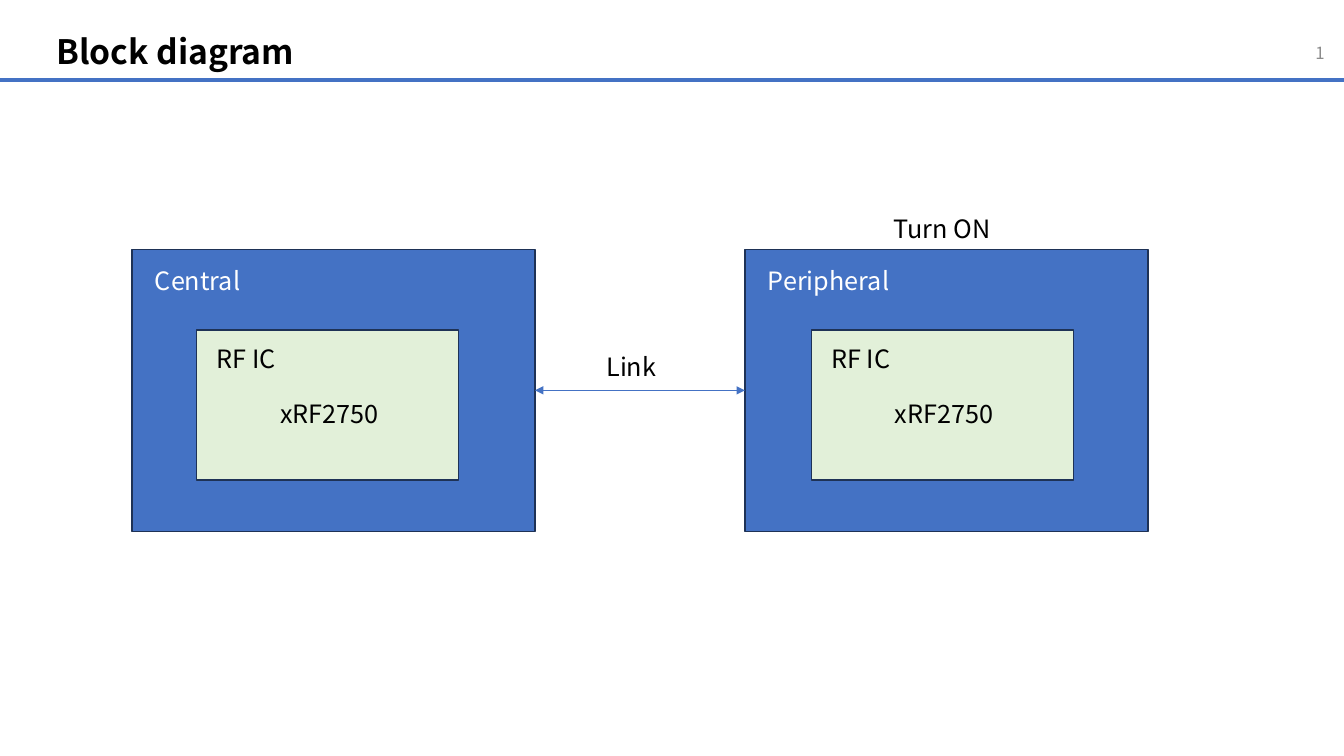
from dataclasses import dataclass
from typing import NamedTuple

from lxml import etree
from pptx import Presentation
from pptx.dml.color import RGBColor
from pptx.enum.shapes import MSO_CONNECTOR, MSO_SHAPE
from pptx.enum.text import MSO_ANCHOR, PP_ALIGN
from pptx.oxml.ns import qn
from pptx.util import Inches, Pt

RECTANGLE = MSO_SHAPE.RECTANGLE
STRAIGHT = MSO_CONNECTOR.STRAIGHT
TOP, MIDDLE = MSO_ANCHOR.TOP, MSO_ANCHOR.MIDDLE
LEFT, RIGHT = PP_ALIGN.LEFT, PP_ALIGN.RIGHT
LEFT_SIDE, RIGHT_SIDE = 1, 3

WIDTH, HEIGHT = Inches(13.33), Inches(7.5)
COLUMN, ROW = WIDTH / 100, HEIGHT / 100
LABEL_WIDTH, LABEL_HEIGHT = 9.3, 5.33


@dataclass(frozen=True)
class Theme:
    font: str = "Noto Sans CJK JP"
    accent: RGBColor = RGBColor(0x44, 0x72, 0xC4)
    outline: RGBColor = RGBColor(0x1E, 0x32, 0x56)
    chip: RGBColor = RGBColor(0xE2, 0xF0, 0xD9)
    dark: RGBColor = RGBColor(0, 0, 0)
    light: RGBColor = RGBColor(0xFF, 0xFF, 0xFF)
    muted: RGBColor = RGBColor(0x8C, 0x8C, 0x8C)
    title_size: int = 24
    label_size: int = 18
    number_size: int = 12


THEME = Theme()


class Box(NamedTuple):
    left: float
    top: float
    width: float
    height: float

    def inner(self, left, top, width=LABEL_WIDTH, height=LABEL_HEIGHT):
        return Box(self.left + left, self.top + top, width, height)

    def lengths(self):
        return (round(self.left * COLUMN), round(self.top * ROW),
                round(self.width * COLUMN), round(self.height * ROW))


def add_text(page, box, text, color=THEME.dark, size=THEME.label_size,
             bold=False, align=LEFT, anchor=TOP):
    frame = page.shapes.add_textbox(*box.lengths()).text_frame
    frame.word_wrap = True
    frame.vertical_anchor = anchor
    para = frame.paragraphs[0]
    para.alignment = align
    span = para.add_run()
    span.text = text
    span.font.name = THEME.font
    span.font.size = Pt(size)
    span.font.bold = bold
    span.font.color.rgb = color
    return para


def add_block(page, box, fill):
    block = page.shapes.add_shape(RECTANGLE, *box.lengths())
    block.shadow.inherit = False
    block.fill.solid()
    block.fill.fore_color.rgb = fill
    block.line.color.rgb = THEME.outline
    block.line.width = Pt(1)
    return block


def add_line(page, start, end, weight):
    line = page.shapes.add_connector(
        STRAIGHT, round(start[0] * COLUMN), round(start[1] * ROW),
        round(end[0] * COLUMN), round(end[1] * ROW))
    line.line.color.rgb = THEME.accent
    line.line.width = Pt(weight)
    etree.SubElement(line._element.spPr, qn("a:effectLst"))
    return line


def add_header(page, box, title, number):
    bottom = box.top + box.height
    add_line(page, (box.left, bottom), (box.left + box.width, bottom), 3)
    para = add_text(page, box.inner(3.45, 3.55, 93.53, 7.07), title,
                    size=THEME.title_size, bold=True, anchor=MIDDLE)
    para.line_spacing = 0.9
    add_text(page, box.inner(76.8, 4.3, 22.5), number, THEME.muted,
             THEME.number_size, align=RIGHT, anchor=MIDDLE)


def add_device(page, box, name, name_width, chip_left):
    device = add_block(page, box, THEME.accent)
    add_text(page, box.inner(0.98, 1.47, name_width), name, THEME.light)
    chip = box.inner(chip_left, 10.67, 19.5, 19.87)
    add_block(page, chip, THEME.chip)
    add_text(page, chip.inner(0.75, 1.07), "RF IC")
    add_text(page, chip.inner(5.48, 8.4), "xRF2750")
    return device


def add_link(page, box, central, peripheral):
    middle = box.top + box.height / 2
    link = add_line(page, (box.left + box.width, middle), (box.left, middle), 0.5)
    link.begin_connect(peripheral, LEFT_SIDE)
    link.end_connect(central, RIGHT_SIDE)
    outline = link.line._get_or_add_ln()
    for end in ("a:headEnd", "a:tailEnd"):
        etree.SubElement(outline, qn(end), type="triangle")
    add_text(page, box.inner(4.57, 12.8), "Link")


def add_diagram(page, box):
    central_box = box.inner(0, 0, 30, box.height)
    peripheral_box = box.inner(box.width - 30, 0, 30, box.height)
    central = add_device(page, central_box, "Central", LABEL_WIDTH, 4.82)
    peripheral = add_device(page, peripheral_box, "Peripheral", 11.48, 4.95)
    add_link(page, box.inner(30, 0, box.width - 60, box.height), central, peripheral)
    add_text(page, peripheral_box.inner(10.35, -5.42), "Turn ON")


def main():
    deck = Presentation()
    deck.slide_width, deck.slide_height = WIDTH, HEIGHT
    page = deck.slides.add_slide(deck.slide_layouts[6])
    add_header(page, Box(0, 0, 100, 10.55), "Block diagram", "1")
    add_diagram(page, Box(9.81, 32.97, 75.61, 37.33))
    deck.save("out.pptx")


if __name__ == "__main__":
    main()
